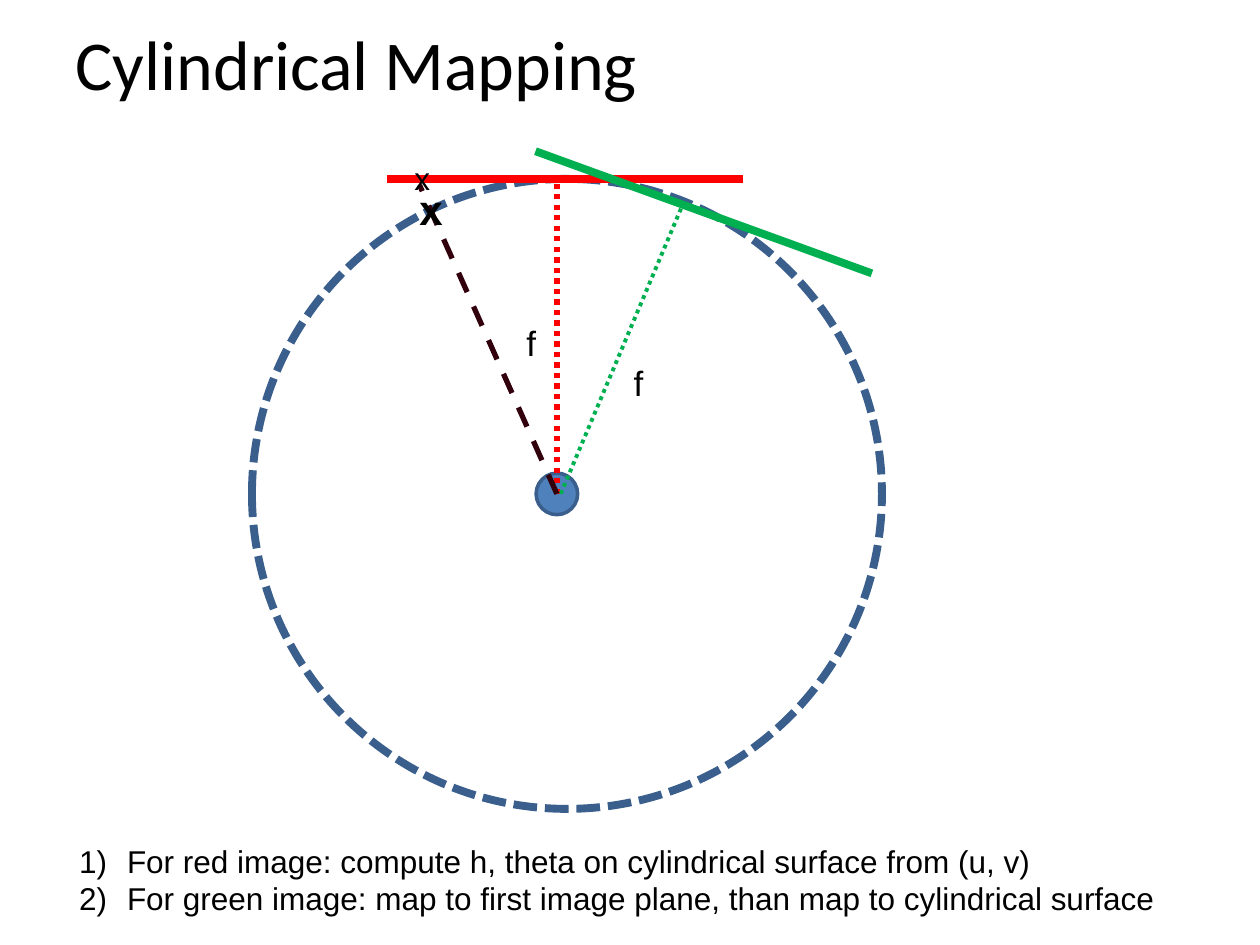
from dataclasses import dataclass

from lxml import etree
from pptx import Presentation
from pptx.dml.color import RGBColor
from pptx.enum.dml import MSO_LINE
from pptx.enum.shapes import MSO_CONNECTOR, MSO_SHAPE
from pptx.enum.text import MSO_ANCHOR, MSO_AUTO_SIZE, PP_ALIGN
from pptx.oxml.ns import qn
from pptx.util import Inches, Pt

OVAL = MSO_SHAPE.OVAL
STRAIGHT = MSO_CONNECTOR.STRAIGHT
SHORT_DASH = MSO_LINE.SQUARE_DOT
DOT = MSO_LINE.ROUND_DOT
DASH = MSO_LINE.DASH
LEFT = PP_ALIGN.LEFT
MIDDLE = MSO_ANCHOR.MIDDLE
FIT_TEXT = MSO_AUTO_SIZE.SHAPE_TO_FIT_TEXT
TITLE_ONLY = 5


@dataclass(frozen=True)
class Theme:
    text: RGBColor = RGBColor(0, 0, 0)
    outline: RGBColor = RGBColor(0x3A, 0x5F, 0x8C)
    camera: RGBColor = RGBColor(0x4F, 0x81, 0xBD)
    red: RGBColor = RGBColor(0xFF, 0, 0)
    green: RGBColor = RGBColor(0, 0xB0, 0x50)
    ray: RGBColor = RGBColor(0x32, 0, 0x0C)
    title_font: str = "Calibri"
    body_font: str = "Arial"
    title_size: int = 40
    focal_size: int = 20
    body_size: int = 18
    mark_size: int = 24


THEME = Theme()


def format_text(text_frame, font_name, size, bold=False):
    for paragraph in text_frame.paragraphs:
        paragraph.alignment = LEFT
        for run in paragraph.runs:
            run.font.name = font_name
            run.font.size = Pt(size)
            run.font.bold = bold
            run.font.color.rgb = THEME.text


def style_line(line, color, width, dash=None):
    line.color.rgb = color
    line.width = Pt(width)
    if dash is not None:
        line.dash_style = dash


def add_circle(slide, left, top, diameter, width, fill=None, dash=None):
    shape = slide.shapes.add_shape(
        OVAL, Inches(left), Inches(top), Inches(diameter), Inches(diameter))
    shape.shadow.inherit = False
    if fill is None:
        shape.fill.background()
    else:
        shape.fill.solid()
        shape.fill.fore_color.rgb = fill
    style_line(shape.line, THEME.outline, width, dash)


def add_line(slide, start, end, color, width, dash=None):
    connector = slide.shapes.add_connector(
        STRAIGHT, *(Inches(value) for value in (*start, *end)))
    etree.SubElement(connector._element.spPr, qn("a:effectLst"))
    style_line(connector.line, color, width, dash)


def add_text(slide, text, box, size, bold=False):
    shape = slide.shapes.add_textbox(*(Inches(value) for value in box))
    text_frame = shape.text_frame
    text_frame.word_wrap = False
    text_frame.auto_size = FIT_TEXT
    text_frame.text = text
    format_text(text_frame, THEME.body_font, size, bold)
    return text_frame


def add_title(slide, text, box):
    title = slide.shapes.title
    title.left, title.top, title.width, title.height = map(Inches, box)
    title.text_frame.text = text
    title.text_frame.vertical_anchor = MIDDLE
    format_text(title.text_frame, THEME.title_font, THEME.title_size)


def add_cylinder(slide, left, top, diameter):
    def at(x, y):
        return round(left + x, 2), round(top + y, 2)

    center = at(2.42, diameter / 2)
    camera_size = 0.33

    add_circle(slide, left, top, diameter, 4.5, dash=SHORT_DASH)
    add_line(slide, at(1.07, 0), at(3.9, 0), THEME.red, 4.5)
    add_line(slide, at(2.25, -0.22), at(4.92, 0.75), THEME.green, 4.5)
    add_circle(slide, center[0] - camera_size / 2, center[1] - camera_size / 2,
               camera_size, 2, fill=THEME.camera)
    add_line(slide, center, at(2.42, 0), THEME.red, 3, DOT)
    add_line(slide, at(2.45, diameter / 2), at(3.42, 0.2), THEME.green, 2.25, DOT)
    for position in (at(2.08, 1.08), at(2.93, 1.4)):
        add_text(slide, "f", (*position, 0.28, 0.44), THEME.focal_size)
    add_line(slide, center, at(1.33, 0.05), THEME.ray, 3, DASH)
    add_text(slide, "x", (*at(1.19, -0.21), 0.33, 0.4), THEME.body_size)
    add_text(slide, "x", (*at(1.23, -0.01), 0.39, 0.5), THEME.mark_size, bold=True)


def add_steps(slide, steps, box):
    text_frame = add_text(slide, "\n".join(steps), box, THEME.body_size)
    indent = Inches(0.38)
    for paragraph in text_frame.paragraphs:
        properties = paragraph._p.get_or_add_pPr()
        properties.set("marL", str(indent))
        properties.set("indent", str(-indent))
        etree.SubElement(properties, qn("a:buFont"), typeface=THEME.body_font)
        etree.SubElement(properties, qn("a:buAutoNum"), type="arabicParenR")


def main():
    presentation = Presentation()
    presentation.slide_width = Inches(10)
    presentation.slide_height = Inches(7.5)
    slide = presentation.slides.add_slide(presentation.slide_layouts[TITLE_ONLY])
    add_title(slide, "Cylindrical Mapping", (0.5, 0, 9, 1))
    add_cylinder(slide, left=2, top=1.42, diameter=5)
    add_steps(slide, (
        "For red image: compute h, theta on cylindrical surface from (u, v)",
        "For green image: map to first image plane, than map to cylindrical surface",
    ), (0.53, 6.63, 8.81, 0.71))
    presentation.save("out.pptx")


if __name__ == "__main__":
    main()
